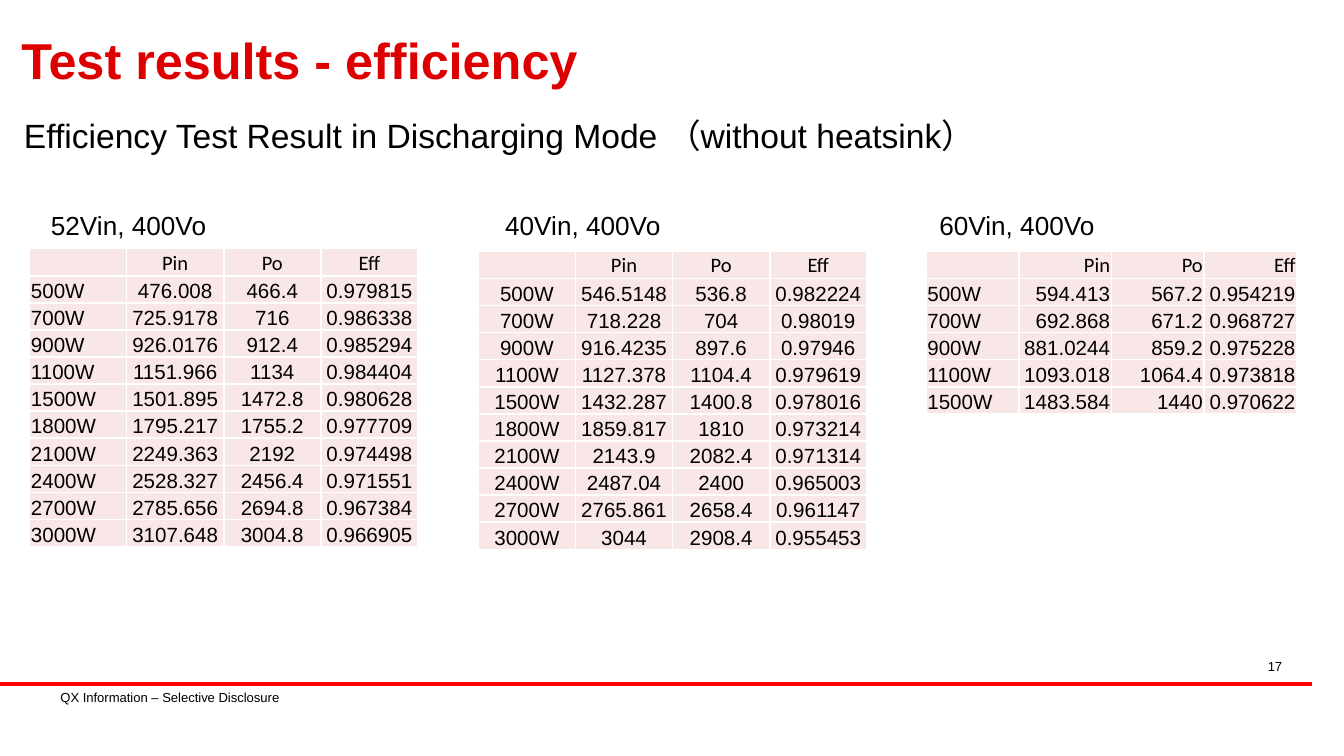
import lxml.etree
import pptx
import pptx.dml.color
import pptx.enum.shapes
import pptx.enum.text
import pptx.oxml.ns
import pptx.util

Inches = pptx.util.Inches
Pt = pptx.util.Pt
ALIGN = pptx.enum.text.PP_ALIGN
ANCHOR = pptx.enum.text.MSO_ANCHOR
qn = pptx.oxml.ns.qn

COLORS = {"text": "000000", "title": "DE0000", "rule": "FF0000",
          "cell": "F9E7E7", "border": "FFFFFF"}
SLIDE_WIDTH = 10
SLIDE_HEIGHT = SLIDE_WIDTH * 9 / 16
ROW_HEIGHT = 2.22 / 11
HEADINGS = ["", "Pin", "Po", "Eff"]

DISCHARGE_52V = [
    ["500W", "476.008", "466.4", "0.979815"],
    ["700W", "725.9178", "716", "0.986338"],
    ["900W", "926.0176", "912.4", "0.985294"],
    ["1100W", "1151.966", "1134", "0.984404"],
    ["1500W", "1501.895", "1472.8", "0.980628"],
    ["1800W", "1795.217", "1755.2", "0.977709"],
    ["2100W", "2249.363", "2192", "0.974498"],
    ["2400W", "2528.327", "2456.4", "0.971551"],
    ["2700W", "2785.656", "2694.8", "0.967384"],
    ["3000W", "3107.648", "3004.8", "0.966905"],
]
DISCHARGE_40V = [
    ["500W", "546.5148", "536.8", "0.982224"],
    ["700W", "718.228", "704", "0.98019"],
    ["900W", "916.4235", "897.6", "0.97946"],
    ["1100W", "1127.378", "1104.4", "0.979619"],
    ["1500W", "1432.287", "1400.8", "0.978016"],
    ["1800W", "1859.817", "1810", "0.973214"],
    ["2100W", "2143.9", "2082.4", "0.971314"],
    ["2400W", "2487.04", "2400", "0.965003"],
    ["2700W", "2765.861", "2658.4", "0.961147"],
    ["3000W", "3044", "2908.4", "0.955453"],
]
DISCHARGE_60V = [
    ["500W", "594.413", "567.2", "0.954219"],
    ["700W", "692.868", "671.2", "0.968727"],
    ["900W", "881.0244", "859.2", "0.975228"],
    ["1100W", "1093.018", "1064.4", "0.973818"],
    ["1500W", "1483.584", "1440", "0.970622"],
]


def apply(target, values):
    """Set each attribute named in values on target."""
    for name, value in values.items():
        setattr(target, name, value)


def rgb(color):
    return pptx.dml.color.RGBColor.from_string(COLORS[color])


class SlideWriter:
    font = "Arial"
    tight_insets = {"margin_left": Inches(0.08), "margin_right": Inches(0.08),
                    "margin_top": Inches(0.04), "margin_bottom": Inches(0.04)}
    cell_format = {"margin_left": Inches(0.01), "margin_right": Inches(0.01),
                   "margin_top": Inches(0.01), "margin_bottom": 0,
                   "vertical_anchor": ANCHOR.BOTTOM}

    def __init__(self, slide):
        self.slide = slide

    def run(self, paragraph, text, size, color="text", font=None, bold=False):
        run = paragraph.add_run()
        run.text = text
        apply(run.font, {"name": font or self.font, "size": Pt(size), "bold": bold})
        run.font.color.rgb = rgb(color)

    def text(self, box, content, size, color="text", bold=False, frame=None, paragraph=None):
        text_frame = self.slide.shapes.add_textbox(*map(Inches, box)).text_frame
        apply(text_frame, {"word_wrap": True, **(frame or {})})
        line = text_frame.paragraphs[0]
        apply(line, paragraph or {})
        self.run(line, content, size, color, bold=bold)

    def rule(self, start, end, color, width):
        line = self.slide.shapes.add_connector(
            pptx.enum.shapes.MSO_CONNECTOR.STRAIGHT, *map(Inches, start + end))
        line.line.color.rgb = rgb(color)
        line.line.width = Pt(width)
        lxml.etree.SubElement(line._element.spPr, qn("a:effectLst"))

    def borders(self, cell, color, width):
        properties = cell._tc.get_or_add_tcPr()
        for side in ("a:lnL", "a:lnR", "a:lnT", "a:lnB"):
            edge = lxml.etree.SubElement(properties, qn(side), w=str(Pt(width)))
            fill = lxml.etree.SubElement(edge, qn("a:solidFill"))
            lxml.etree.SubElement(fill, qn("a:srgbClr"), val=COLORS[color])

    def cell(self, cell, text, align, font, size=11):
        apply(cell, self.cell_format)
        self.borders(cell, "border", 1)
        cell.fill.solid()
        cell.fill.fore_color.rgb = rgb("cell")
        paragraph = cell.text_frame.paragraphs[0]
        paragraph.alignment = align
        if text:
            self.run(paragraph, text, size, font=font)
        else:
            # An empty cell keeps its row low only with a small end mark.
            lxml.etree.SubElement(paragraph._p, qn("a:endParaRPr"), sz=str(size * 100))

    def table(self, left, top, width, rows, label_align, value_align):
        rows = [HEADINGS] + rows
        table = self.slide.shapes.add_table(
            len(rows), len(HEADINGS), Inches(left), Inches(top),
            Inches(width), Inches(ROW_HEIGHT * len(rows))).table
        apply(table, {"first_row": False, "horz_banding": False})
        for column in table.columns:
            column.width = Inches(width / len(HEADINGS))
        for r, row in enumerate(rows):
            table.rows[r].height = Inches(ROW_HEIGHT)
            for c, value in enumerate(row):
                self.cell(table.cell(r, c), value, value_align if c else label_align,
                          self.font if r else "Calibri")


def main():
    deck = pptx.Presentation()
    apply(deck, {"slide_width": Inches(SLIDE_WIDTH), "slide_height": Inches(SLIDE_HEIGHT)})
    writer = SlideWriter(deck.slides.add_slide(deck.slide_layouts[6]))
    tight = writer.tight_insets

    writer.rule((0, 5.09), (9.76, 5.09), "rule", 2.25)
    writer.text((0.37, 5.09, 2.31, 0.2), "QX Information – Selective Disclosure", 7, frame=tight)
    writer.text((7.29, 4.86, 2.33, 0.17), "17", 7, frame=tight,
                paragraph={"alignment": ALIGN.RIGHT})
    writer.text((0.08, 0.81, 9.12, 0.4),
                "Efficiency Test Result in Discharging Mode （without heatsink）", 18)
    writer.text((0.08, 0.14, 9.25, 0.67), "Test results - efficiency", 27, "title", True,
                frame={**tight, "vertical_anchor": ANCHOR.MIDDLE},
                paragraph={"line_spacing": 0.85})

    results = [
        ("52Vin, 400Vo", 0.28, (0.22, 1.85, 2.89), DISCHARGE_52V, ALIGN.LEFT, ALIGN.CENTER),
        ("40Vin, 400Vo", 3.66, (3.56, 1.87, 2.89), DISCHARGE_40V, ALIGN.CENTER, ALIGN.CENTER),
        ("60Vin, 400Vo", 6.89, (6.89, 1.87, 2.76), DISCHARGE_60V, ALIGN.LEFT, ALIGN.RIGHT),
    ]
    for voltages, caption_left, place, rows, label_align, value_align in results:
        writer.table(*place, rows, label_align, value_align)
        writer.text((caption_left, 1.51, 2.49, 0.34), voltages, 14)

    deck.save("out.pptx")


if __name__ == "__main__":
    main()
